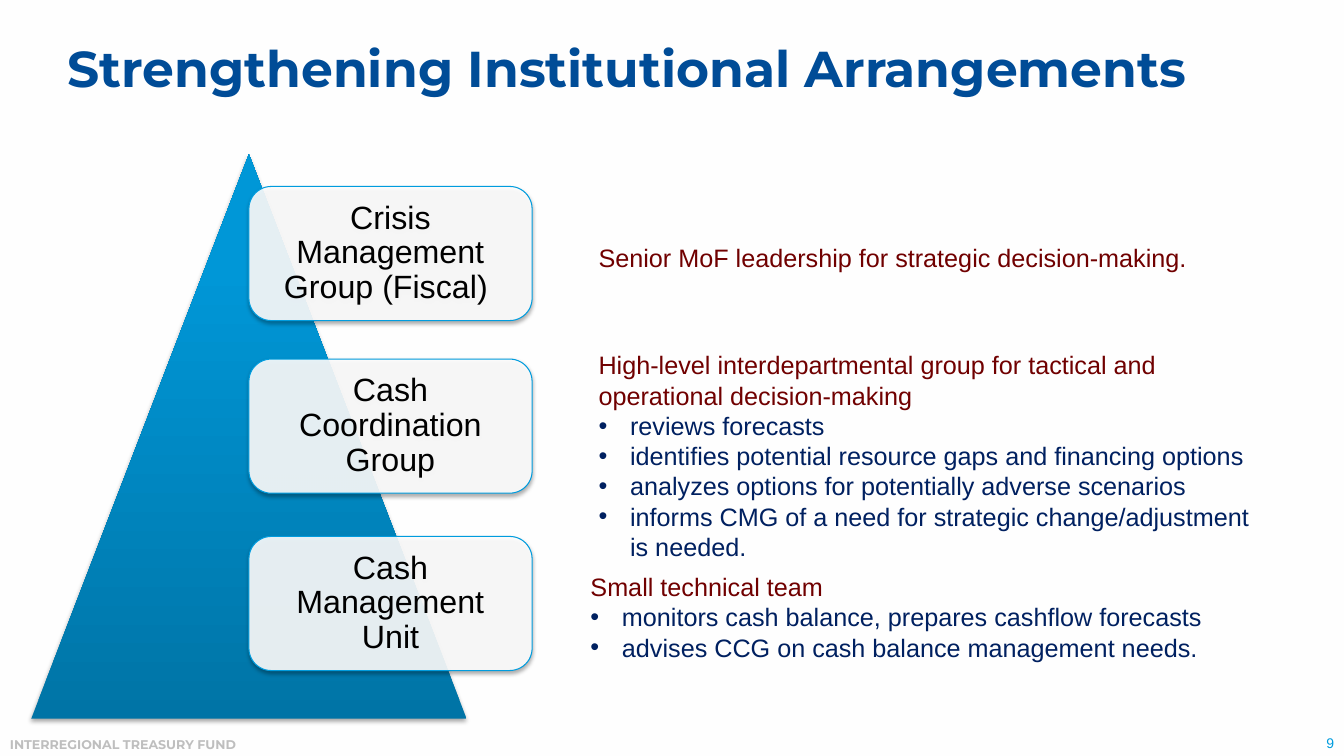
from dataclasses import dataclass

from lxml import etree
from pptx import Presentation
from pptx.dml.color import RGBColor
from pptx.enum.shapes import MSO_SHAPE
from pptx.enum.text import MSO_ANCHOR, PP_ALIGN
from pptx.oxml.ns import qn
from pptx.util import Pt

TRIANGLE = MSO_SHAPE.ISOSCELES_TRIANGLE
ROUNDED = MSO_SHAPE.ROUNDED_RECTANGLE
TOP, MIDDLE, BOTTOM = MSO_ANCHOR.TOP, MSO_ANCHOR.MIDDLE, MSO_ANCHOR.BOTTOM
LEFT, CENTER, RIGHT = PP_ALIGN.LEFT, PP_ALIGN.CENTER, PP_ALIGN.RIGHT

WHITE = RGBColor(0xFE, 0xFE, 0xFE)
BLACK = RGBColor(0x00, 0x00, 0x00)
GREY = RGBColor(0xBE, 0xBE, 0xBE)
TITLE_BLUE = RGBColor(0x00, 0x4C, 0x97)
BRIGHT_BLUE = RGBColor(0x00, 0x9C, 0xDE)
PYRAMID_BASE = RGBColor(0x00, 0x74, 0xA6)
PYRAMID_TOP = RGBColor(0x00, 0x97, 0xD7)
MAROON = RGBColor(0x70, 0x00, 0x00)
NAVY = RGBColor(0x00, 0x20, 0x60)

HEADING_FONT, BODY_FONT = "Montserrat", "Arial"
BULLET_INDENT = 22.5


@dataclass(frozen=True)
class Style:
    font: str
    size: float
    color: RGBColor
    bold: bool = False
    align: PP_ALIGN = LEFT
    line_spacing: float = 1.0


@dataclass(frozen=True)
class Level:
    name: str
    box_top: float
    role: str
    role_left: float
    role_top: float
    role_height: float
    duties: tuple[str, ...] = ()


TITLE = Style(HEADING_FONT, 36, TITLE_BLUE, bold=True, line_spacing=0.9)
FOOTER = Style(HEADING_FONT, 9, GREY, bold=True)
PAGE_NUMBER = Style(BODY_FONT, 10, BRIGHT_BLUE, align=RIGHT)
LEVEL_NAME = Style(BODY_FONT, 23, BLACK, align=CENTER, line_spacing=0.9)
ROLE = Style(BODY_FONT, 18, MAROON)
DUTY = Style(BODY_FONT, 18, NAVY)

LEVELS = (
    Level("Crisis Management Group (Fiscal) ", 133.2,
          "Senior MoF leadership for strategic decision-making.", 420.5, 169.2, 29),
    Level("Cash Coordination Group", 256.5,
          "High-level interdepartmental group for tactical and operational decision-making",
          420.5, 246.3, 160,
          ("reviews forecasts",
           "identifies potential resource gaps and financing options",
           "analyzes options for potentially adverse scenarios",
           "informs CMG of a need for strategic change/adjustment is needed.")),
    Level("Cash Management Unit", 383.2,
          "Small technical team", 414.7, 404.6, 73,
          ("monitors cash balance, prepares cashflow forecasts",
           "advises CCG on cash balance management needs.")),
)


def write(paragraph, text: str, style: Style) -> None:
    paragraph.text = text
    paragraph.alignment = style.align
    paragraph.line_spacing = style.line_spacing
    font = paragraph.font
    font.name, font.size, font.bold = style.font, Pt(style.size), style.bold
    font.color.rgb = style.color


def add_bullet(paragraph) -> None:
    properties = paragraph._p.get_or_add_pPr()
    properties.set("marL", str(Pt(BULLET_INDENT)))
    properties.set("indent", str(-Pt(BULLET_INDENT)))
    etree.SubElement(properties, qn("a:buFont"), typeface=BODY_FONT)
    etree.SubElement(properties, qn("a:buChar"), char="•")


def add_text(slide, left: float, top: float, width: float, height: float,
             text: str, style: Style, anchor: MSO_ANCHOR = TOP):
    box = slide.shapes.add_textbox(Pt(left), Pt(top), Pt(width), Pt(height))
    frame = box.text_frame
    frame.word_wrap = True
    frame.vertical_anchor = anchor
    write(frame.paragraphs[0], text, style)
    return frame


def add_soft_shadow(shape) -> None:
    shape.shadow.inherit = False
    effects = shape._element.spPr.find(qn("a:effectLst"))
    shadow = etree.SubElement(effects, qn("a:outerShdw"), blurRad=str(Pt(3.1)),
                              dist=str(Pt(1.8)), dir="5400000", rotWithShape="0")
    color = etree.SubElement(shadow, qn("a:srgbClr"), val=str(BLACK))
    etree.SubElement(color, qn("a:alpha"), val="35000")


def add_pyramid(slide) -> None:
    pyramid = slide.shapes.add_shape(TRIANGLE, Pt(22.3), Pt(110.2), Pt(311), Pt(403.2))
    pyramid.line.fill.background()
    pyramid.fill.gradient()
    pyramid.fill.gradient_angle = 90
    base, upper = pyramid.fill.gradient_stops
    base.color.rgb, base.position = PYRAMID_BASE, 0
    upper.color.rgb, upper.position = PYRAMID_TOP, 0.8
    add_soft_shadow(pyramid)


def add_level_box(slide, level: Level) -> None:
    box = slide.shapes.add_shape(ROUNDED, Pt(177.8), Pt(level.box_top), Pt(202.3), Pt(95.8))
    box.fill.solid()
    box.fill.fore_color.rgb = WHITE
    fill_color = box._element.spPr.find(qn("a:solidFill")).find(qn("a:srgbClr"))
    etree.SubElement(fill_color, qn("a:alpha"), val="90000")
    box.line.color.rgb = BRIGHT_BLUE
    box.line.width = Pt(0.75)
    add_soft_shadow(box)
    frame = box.text_frame
    frame.word_wrap = True
    frame.vertical_anchor = MIDDLE
    frame.margin_left = frame.margin_right = Pt(12)
    write(frame.paragraphs[0], level.name, LEVEL_NAME)


def add_role(slide, level: Level) -> None:
    frame = add_text(slide, level.role_left, level.role_top, 491.8, level.role_height,
                     level.role, ROLE)
    for duty in level.duties:
        paragraph = frame.add_paragraph()
        add_bullet(paragraph)
        write(paragraph, duty, DUTY)


def main() -> None:
    presentation = Presentation()
    presentation.slide_width, presentation.slide_height = Pt(960), Pt(540)
    slide = presentation.slides.add_slide(presentation.slide_layouts[6])
    slide.background.fill.solid()
    slide.background.fill.fore_color.rgb = WHITE

    # Footer and page number
    add_text(slide, 0, 522.7, 720, 18, "INTERREGIONAL TREASURY FUND", FOOTER)
    add_text(slide, 865, 521, 95, 19.4, "9", PAGE_NUMBER, BOTTOM)

    # Title
    title = add_text(slide, 48, 7.2, 864, 88,
                     "Strengthening Institutional Arrangements", TITLE, MIDDLE)
    title.margin_left = title.margin_right = title.margin_top = title.margin_bottom = 0

    # Pyramid with its levels and their roles
    add_pyramid(slide)
    for level in LEVELS:
        add_level_box(slide, level)
        add_role(slide, level)

    presentation.save("out.pptx")


if __name__ == "__main__":
    main()
